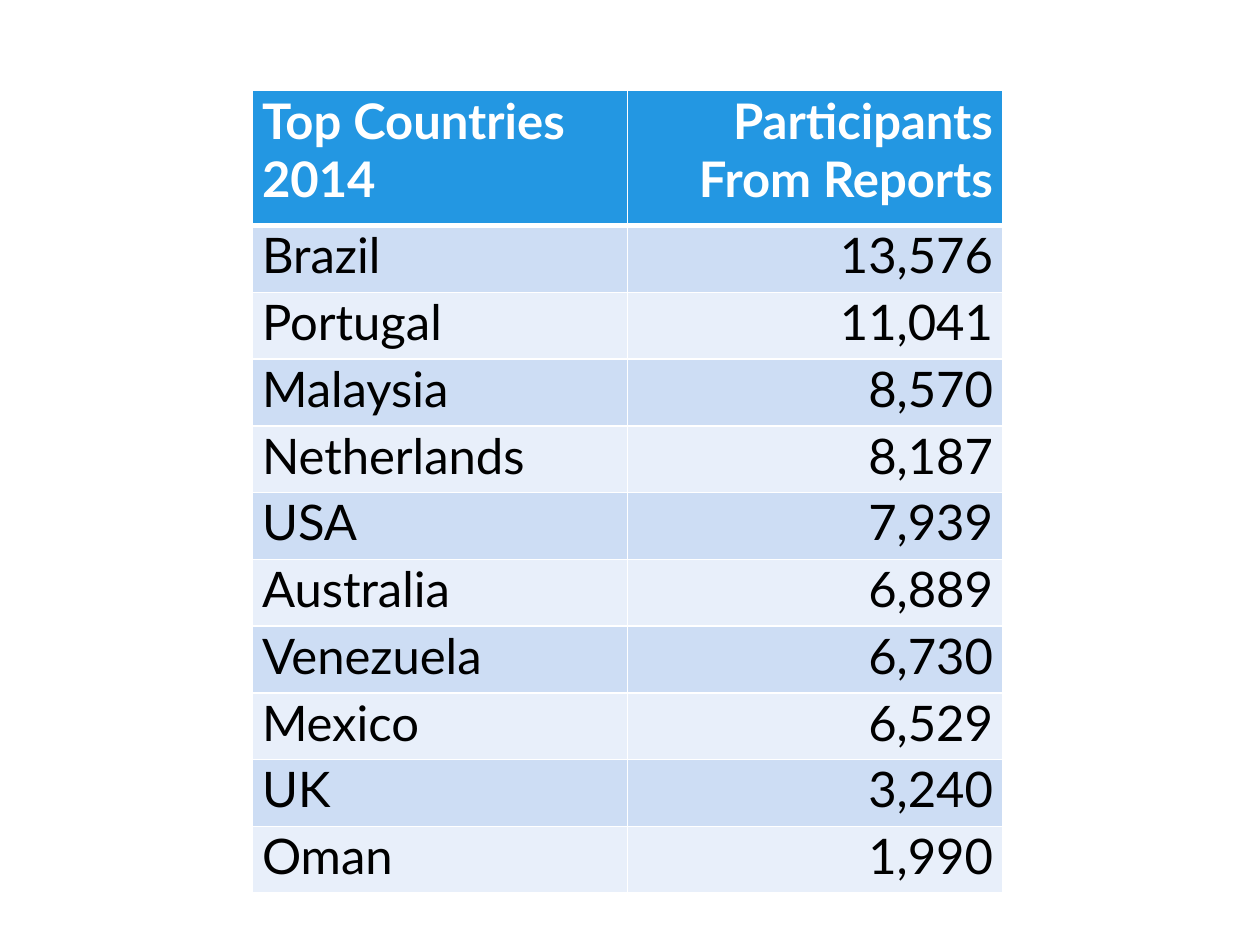
import pptx
import pptx.dml.color
import pptx.enum.text
import pptx.oxml
import pptx.oxml.ns
import pptx.util
from pptx.util import Inches

FONT = "Lato"
COLORS = {
    "header": "2397E2",
    "band_dark": "CDDDF4",
    "band_light": "E8EFFA",
    "border": "FFFFFF",
    "header_text": "FFFFFF",
    "body_text": "000000",
}
HEADERS = (["Top Countries", "2014"], ["Participants", "From Reports"])
COUNTRIES = [
    ("Brazil", 13576),
    ("Portugal", 11041),
    ("Malaysia", 8570),
    ("Netherlands", 8187),
    ("USA", 7939),
    ("Australia", 6889),
    ("Venezuela", 6730),
    ("Mexico", 6529),
    ("UK", 3240),
    ("Oman", 1990),
]
HEADER_HEIGHT = 1.07
ROW_HEIGHT = 0.53
COLUMN_WIDTH = 2.98
THIN, THICK = 1, 3


def rgb(name):
    return pptx.dml.color.RGBColor.from_string(COLORS[name])


def set_borders(cell, top, bottom):
    """Draw all four cell borders; top and bottom are widths in points."""
    properties = cell._tc.get_or_add_tcPr()
    for side, width in (("L", THIN), ("R", THIN), ("T", top), ("B", bottom)):
        properties.append(pptx.oxml.parse_xml(
            f'<a:ln{side} {pptx.oxml.ns.nsdecls("a")} w="{pptx.util.Pt(width)}">'
            f'<a:solidFill><a:srgbClr val="{COLORS["border"]}"/></a:solidFill>'
            f'</a:ln{side}>'))


def write_lines(cell, lines, color, bold, alignment):
    cell.margin_left = cell.margin_right = Inches(0.08)
    cell.margin_top = cell.margin_bottom = 0
    frame = cell.text_frame
    for index, line in enumerate(lines):
        paragraph = frame.paragraphs[0] if index == 0 else frame.add_paragraph()
        paragraph.alignment = alignment
        run = paragraph.add_run()
        run.text = line
        run.font.name = FONT
        run.font.size = pptx.util.Pt(28)
        run.font.bold = bold
        run.font.color.rgb = rgb(color)


def fill_row(table, row, texts):
    """Write and style one row; row 0 is the header, the others are banded."""
    is_header = row == 0
    fill = "header" if is_header else ("band_light", "band_dark")[row % 2]
    color = "header_text" if is_header else "body_text"
    align = pptx.enum.text.PP_ALIGN
    for column, alignment in enumerate((align.LEFT, align.RIGHT)):
        cell = table.cell(row, column)
        set_borders(cell, THICK if row == 1 else THIN, THICK if is_header else THIN)
        cell.fill.solid()
        cell.fill.fore_color.rgb = rgb(fill)
        write_lines(cell, texts[column], color, is_header, alignment)


def add_country_table(slide):
    rows = [HEADERS] + [([name], [f"{count:,}"]) for name, count in COUNTRIES]
    height = HEADER_HEIGHT + ROW_HEIGHT * len(COUNTRIES)
    table = slide.shapes.add_table(
        len(rows), len(HEADERS), Inches(2), Inches(0.72),
        Inches(COLUMN_WIDTH * len(HEADERS)), Inches(height)).table
    for column in table.columns:
        column.width = Inches(COLUMN_WIDTH)
    for index, texts in enumerate(rows):
        table.rows[index].height = Inches(ROW_HEIGHT if index else HEADER_HEIGHT)
        fill_row(table, index, texts)


def main():
    presentation = pptx.Presentation()
    presentation.slide_width = Inches(10)
    presentation.slide_height = Inches(7.5)
    blank_layout = presentation.slide_layouts[6]
    slide = presentation.slides.add_slide(blank_layout)
    add_country_table(slide)
    presentation.save("out.pptx")


if __name__ == "__main__":
    main()
